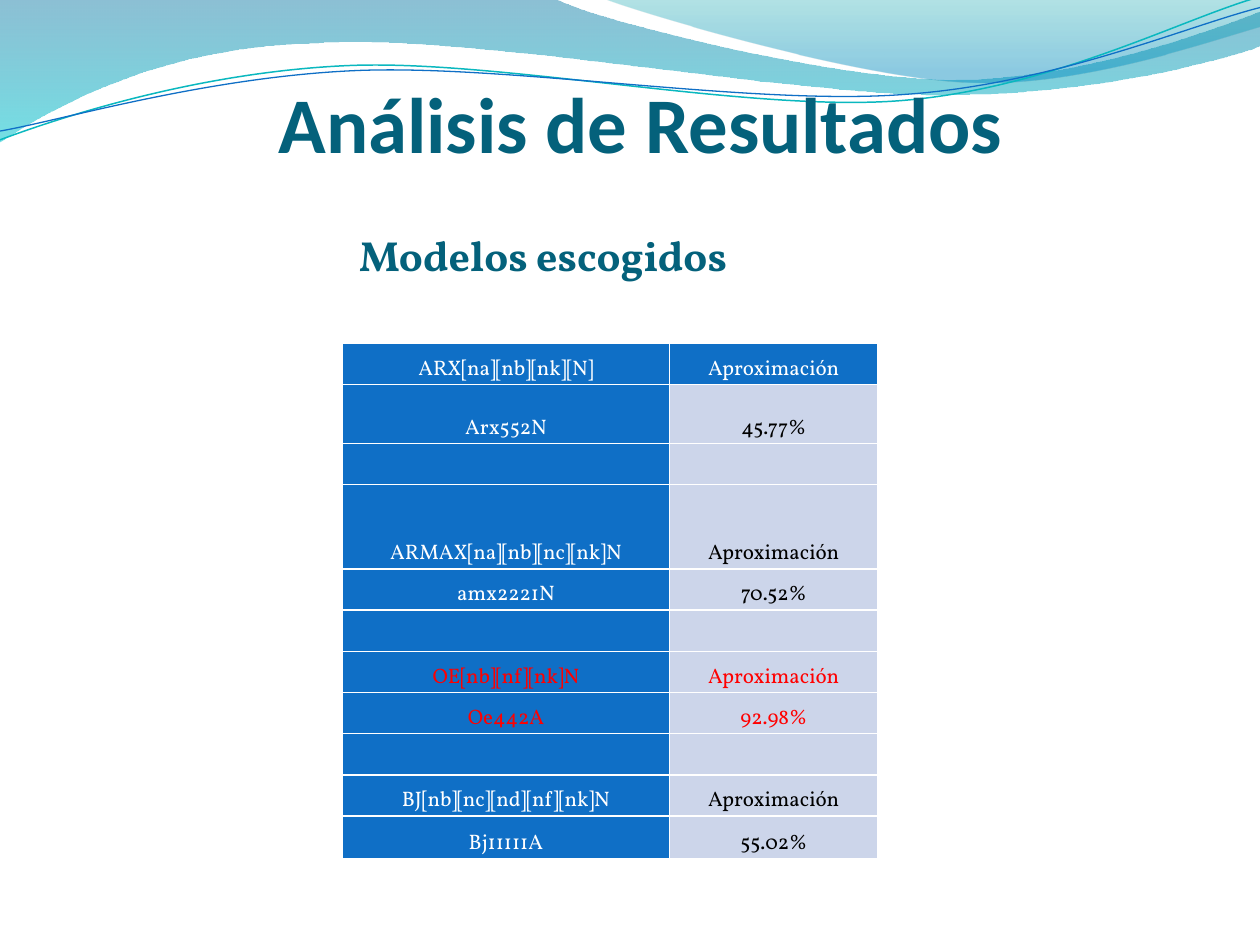
from dataclasses import dataclass
from math import cos, radians, sin

from lxml.etree import SubElement
from pptx import Presentation
from pptx.dml.color import RGBColor
from pptx.enum.text import MSO_ANCHOR, MSO_AUTO_SIZE, PP_ALIGN
from pptx.oxml.ns import qn
from pptx.util import Cm, Pt


@dataclass(frozen=True)
class Theme:
    heading: str = "04617B"
    blue: str = "0F6FC6"
    teal: str = "0AB8BF"
    pale: str = "CCD5EA"
    white: str = "FFFFFF"
    black: str = "000000"
    red: str = "FF0000"
    title_font: str = "Calibri"
    body_font: str = "Vollkorn"
    title_size: int = 45
    subtitle_size: int = 24
    table_size: int = 12


THEME = Theme()
CM_PER_INCH = 2.54
LINE_TILT = -2.7
LINE_CENTER = (4.99, 0.58)

# Wave outlines in inches: a start, then straight (2 numbers) or cubic (6 numbers) segments
LEFT_WAVE = [
    (0, 0), (4.4, -0.01),
    (4.76, 0.17, 6.64, 0.63, 7.58, 0.63), (8.53, 0.63, 9.58, 0.26, 10, 0.09),
    (10.01, 0.36),
    (9.83, 0.44, 8.7, 0.76, 7.46, 0.75), (6.22, 0.75, 3.82, 0.28, 2.57, 0.34),
    (1.29, 0.36, 0.46, 0.83, -0.01, 1.13), (0, 0),
]
RIGHT_WAVE = [
    (4.79, -0.01),
    (5.09, 0.11, 6.82, 0.62, 7.69, 0.65), (8.56, 0.69, 9.61, 0.32, 10, 0.21),
    (10, 0), (4.79, -0.01),
]
TEAL_LINE = [
    (0, 1.11),
    (0.48, 0.93, 1.58, 0.57, 2.77, 0.52), (3.95, 0.47, 5.93, 0.89, 7.13, 0.8),
    (8.33, 0.71, 9.38, 0.15, 9.98, -0.02),
]
BLUE_LINE = [
    (0, 1.04),
    (0.47, 0.96, 1.64, 0.61, 2.83, 0.56), (4.03, 0.51, 5.97, 0.84, 7.17, 0.75),
    (8.36, 0.67, 9.41, 0.21, 10, 0.06),
]

# Gradient stops: position, colour, opacity in percent
LEFT_STOPS = [(0, "0074A1", 45), (1, "00C6CF", 55)]
RIGHT_STOPS = [(0, "00A1A9", 30), (0.8, "008BBF", 45)]

# Table rows: model, fit, height in cm
ROW_HEIGHT = 0.83
MODEL_ROWS = [
    ("ARX[na][nb][nk][N]", "Aproximación", ROW_HEIGHT),
    ("Arx552N", "45.77%", 1.19),
    ("", "", ROW_HEIGHT),
    ("ARMAX[na][nb][nc][nk]N", "Aproximación", 1.7),
    ("amx2221N", "70.52%", ROW_HEIGHT),
    ("", "", ROW_HEIGHT),
    ("OE[nb][nf][nk]N", "Aproximación", ROW_HEIGHT),
    ("Oe442A", "92.98%", ROW_HEIGHT),
    ("", "", ROW_HEIGHT),
    ("BJ[nb][nc][nd][nf][nk]N", "Aproximación", ROW_HEIGHT),
    ("Bj11111A", "55.02%", 0.86),
]
BEST_ROWS = (6, 7)
COLUMN_WIDTHS = (6.6, 4.2)


def rgb(color):
    return RGBColor.from_string(color)


def turn(point, degrees):
    """Turn a point about the centre of the wave lines and convert it to a length."""
    center_x, center_y = LINE_CENTER
    x, y = point[0] - center_x, point[1] - center_y
    cosine, sine = cos(radians(degrees)), sin(radians(degrees))
    return (Cm((center_x + x * cosine - y * sine) * CM_PER_INCH),
            Cm((center_y + x * sine + y * cosine) * CM_PER_INCH))


def add_curve(shapes, outline, closed, rotation=0):
    """Lay out all points as a freeform, then join each control triple into a curve."""
    points = [turn(segment[index:index + 2], -rotation)
              for segment in outline for index in range(0, len(segment), 2)]
    builder = shapes.build_freeform(*points[0])
    builder.add_line_segments(points[1:], close=closed)
    shape = builder.convert_to_shape()
    shape.shadow.inherit = False
    shape.rotation = rotation
    lines = iter(list(shape._element.iter(qn("a:lnTo"))))
    for segment in outline[1:]:
        line = next(lines)
        if len(segment) == 6:
            line.tag = qn("a:cubicBezTo")
            for _ in range(2):
                extra = next(lines)
                line.append(extra[0])
                extra.getparent().remove(extra)
    return shape


def add_wave(shapes, outline, stops):
    shape = add_curve(shapes, outline, closed=True)
    shape.line.fill.background()
    shape.fill.gradient()
    shape.fill.gradient_angle = 270
    for stop, (position, color, _) in zip(shape.fill.gradient_stops, stops):
        stop.position = position
        stop.color.rgb = rgb(color)
    color_elements = list(shape._element.spPr.iter(qn("a:srgbClr")))
    for element, (_, _, opacity) in zip(color_elements, stops):
        SubElement(element, qn("a:alpha"), val=str(opacity * 1000))


def add_wave_line(shapes, outline, color, width):
    shape = add_curve(shapes, outline, closed=False, rotation=LINE_TILT)
    shape.fill.background()
    shape.line.color.rgb = rgb(color)
    shape.line.width = Pt(width)


def write_text(frame, text, *, size, font, color, bold=False, align=PP_ALIGN.LEFT,
               line_spacing=None, space_after=None):
    paragraph = frame.paragraphs[0]
    paragraph.alignment = align
    paragraph.line_spacing = line_spacing
    paragraph.space_before = Pt(0)
    paragraph.space_after = space_after
    run = paragraph.add_run()
    run.text = text
    run.font.size = Pt(size)
    run.font.name = font
    run.font.bold = bold
    run.font.color.rgb = rgb(color)
    return paragraph


def place_placeholder(slide, shape, box, anchor, margins):
    """Move a placeholder in front of the waves and set its frame."""
    slide.shapes._spTree.append(shape._element)
    shape.left, shape.top, shape.width, shape.height = map(Cm, box)
    frame = shape.text_frame
    frame.word_wrap = True
    frame.auto_size = MSO_AUTO_SIZE.NONE
    frame.vertical_anchor = anchor
    frame.margin_left, frame.margin_top, frame.margin_right, frame.margin_bottom = map(Cm, margins)
    return frame


def format_cell(cell, fill):
    cell.margin_left = cell.margin_right = Cm(0.13)
    cell.margin_top = cell.margin_bottom = Cm(0)
    cell.vertical_anchor = MSO_ANCHOR.BOTTOM
    properties = cell._tc.get_or_add_tcPr()
    for side in "LRTB":
        border = SubElement(properties, qn(f"a:ln{side}"), w=str(Pt(1)))
        SubElement(SubElement(border, qn("a:solidFill")), qn("a:srgbClr"), val=THEME.white)
    cell.fill.solid()
    cell.fill.fore_color.rgb = rgb(fill)


def add_model_table(slide):
    heights = [row[2] for row in MODEL_ROWS]
    table = slide.shapes.add_table(
        len(MODEL_ROWS), len(COLUMN_WIDTHS), Cm(6.9), Cm(6.92),
        Cm(sum(COLUMN_WIDTHS)), Cm(sum(heights))).table
    for column, width in zip(table.columns, COLUMN_WIDTHS):
        column.width = Cm(width)
    for row_index, (model, fit, height) in enumerate(MODEL_ROWS):
        table.rows[row_index].height = Cm(height)
        for column_index, text in enumerate((model, fit)):
            cell = table.cell(row_index, column_index)
            dark = row_index == 0 or column_index == 0
            format_cell(cell, THEME.blue if dark else THEME.pale)
            if text:
                color = THEME.white if dark else THEME.black
                write_text(cell.text_frame, text, size=THEME.table_size, font=THEME.body_font,
                           color=THEME.red if row_index in BEST_ROWS else color,
                           align=PP_ALIGN.CENTER, line_spacing=1.15, space_after=Pt(10))


def main():
    presentation = Presentation()
    presentation.slide_width, presentation.slide_height = Cm(25.4), Cm(19.05)
    slide = presentation.slides.add_slide(presentation.slide_layouts[1])
    title, body = slide.placeholders

    # Wave decoration
    add_wave(slide.shapes, LEFT_WAVE, LEFT_STOPS)
    add_wave(slide.shapes, RIGHT_WAVE, RIGHT_STOPS)
    line_group = slide.shapes.add_group_shape()
    add_wave_line(line_group.shapes, TEAL_LINE, THEME.teal, 0.85)
    add_wave_line(line_group.shapes, BLUE_LINE, THEME.blue, 0.75)

    # Title and subtitle
    frame = place_placeholder(slide, title, (1.5, 2.13, 22.83, 3.2),
                              MSO_ANCHOR.BOTTOM, (0, 0.13, 0, 1.92))
    write_text(frame, "Análisis de Resultados", size=THEME.title_size, font=THEME.title_font,
               color=THEME.heading, bold=True, align=PP_ALIGN.CENTER)
    frame = place_placeholder(slide, body, (7.11, 4.62, 11.23, 1.83),
                              MSO_ANCHOR.TOP, (0.13, 0, 0.13, 0))
    paragraph = write_text(frame, "Modelos escogidos", size=THEME.subtitle_size,
                           font=THEME.body_font, color=THEME.heading, bold=True)
    properties = paragraph._p.get_or_add_pPr()
    properties.set("marL", "0")
    properties.set("indent", "0")
    SubElement(properties, qn("a:buNone"))

    # Chosen models
    add_model_table(slide)
    presentation.save("out.pptx")


if __name__ == "__main__":
    main()
